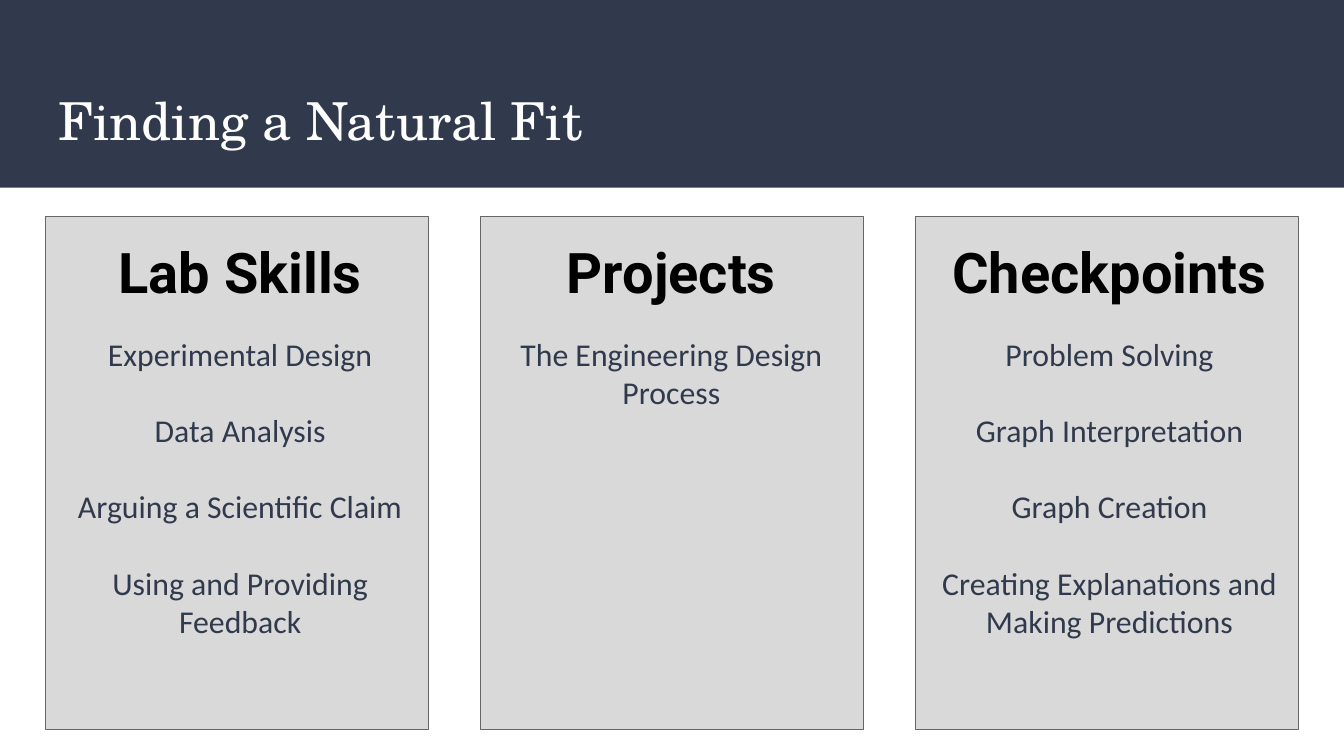
import pptx
import pptx.util
import pptx.dml.color
import pptx.enum.shapes
import pptx.enum.text

Cm, Pt = pptx.util.Cm, pptx.util.Pt

TITLE = "Finding a Natural Fit"
NAVY, GREY, EDGE = "31394D", "D9D9D9", "666666"

# Heading, left and height of the text, items
COLS = [
    ("Lab Skills", 0.97, 8.81, [
        "Experimental Design",
        "Data Analysis",
        "Arguing a Scientific Claim",
        "Using and Providing Feedback",
    ]),
    ("Projects", 9.12, 3.86, ["The Engineering Design Process"]),
    ("Checkpoints", 17.4, 8.94, [
        "Problem Solving",
        "Graph Interpretation",
        "Graph Creation",
        "Creating Explanations and Making Predictions",
    ]),
]
WIDE, HIGH = 25.4, 14.29
SIDE, TOP, CARD_W, CARD_H = 0.86, 4.09, 7.24, 9.7
STEP = (WIDE - 2 * SIDE - CARD_W) / (len(COLS) - 1)
TEXT_TOP, TEXT_W = 4.24, 7.14


def color(code):
    return pptx.dml.color.RGBColor.from_string(code)


def add_rect(x, y, w, h, fill, line=None):
    box = slide.shapes.add_shape(
        pptx.enum.shapes.MSO_SHAPE.RECTANGLE, Cm(x), Cm(y), Cm(w), Cm(h))
    box.shadow.inherit = False
    box.fill.solid()
    box.fill.fore_color.rgb = color(fill)
    if line:
        box.line.color.rgb = color(line)
        box.line.width = Pt(0.75)
    else:
        box.line.fill.background()


def add_frame(x, y, w, h):
    """Add a wrapping text box with even margins and return its frame."""
    frame = slide.shapes.add_textbox(Cm(x), Cm(y), Cm(w), Cm(h)).text_frame
    frame.word_wrap = True
    frame.margin_left = frame.margin_right = Cm(0.25)
    frame.margin_top = frame.margin_bottom = Cm(0.25)
    return frame


def style(para, text, face, size, ink, bold=False):
    para.text = text
    font = para.font
    font.name, font.size, font.bold = face, Pt(size), bold
    font.color.rgb = color(ink)


deck = pptx.Presentation()
deck.slide_width, deck.slide_height = Cm(WIDE), Cm(HIGH)
slide = deck.slides.add_slide(deck.slide_layouts[6])

add_rect(0, 0, WIDE, 3.55, NAVY)
frame = add_frame(SIDE, 1.4, WIDE - 2 * SIDE, 1.73)
frame.vertical_anchor = pptx.enum.text.MSO_ANCHOR.MIDDLE
style(frame.paragraphs[0], TITLE, "TeX Gyre Schola", 28, "FFFFFF")

for i, (head, left, tall, items) in enumerate(COLS):
    add_rect(SIDE + i * STEP, TOP, CARD_W, CARD_H, GREY, EDGE)
    frame = add_frame(left, TEXT_TOP, TEXT_W, tall)
    style(frame.paragraphs[0], head, "Roboto", 30, "000000", True)
    for j, item in enumerate(items):
        para = frame.add_paragraph()
        style(para, item, "Calibri", 17, NAVY)
        para.space_before = Pt(20.5 if j else 16)
    for para in frame.paragraphs:
        para.alignment = pptx.enum.text.PP_ALIGN.CENTER

deck.save("out.pptx")
